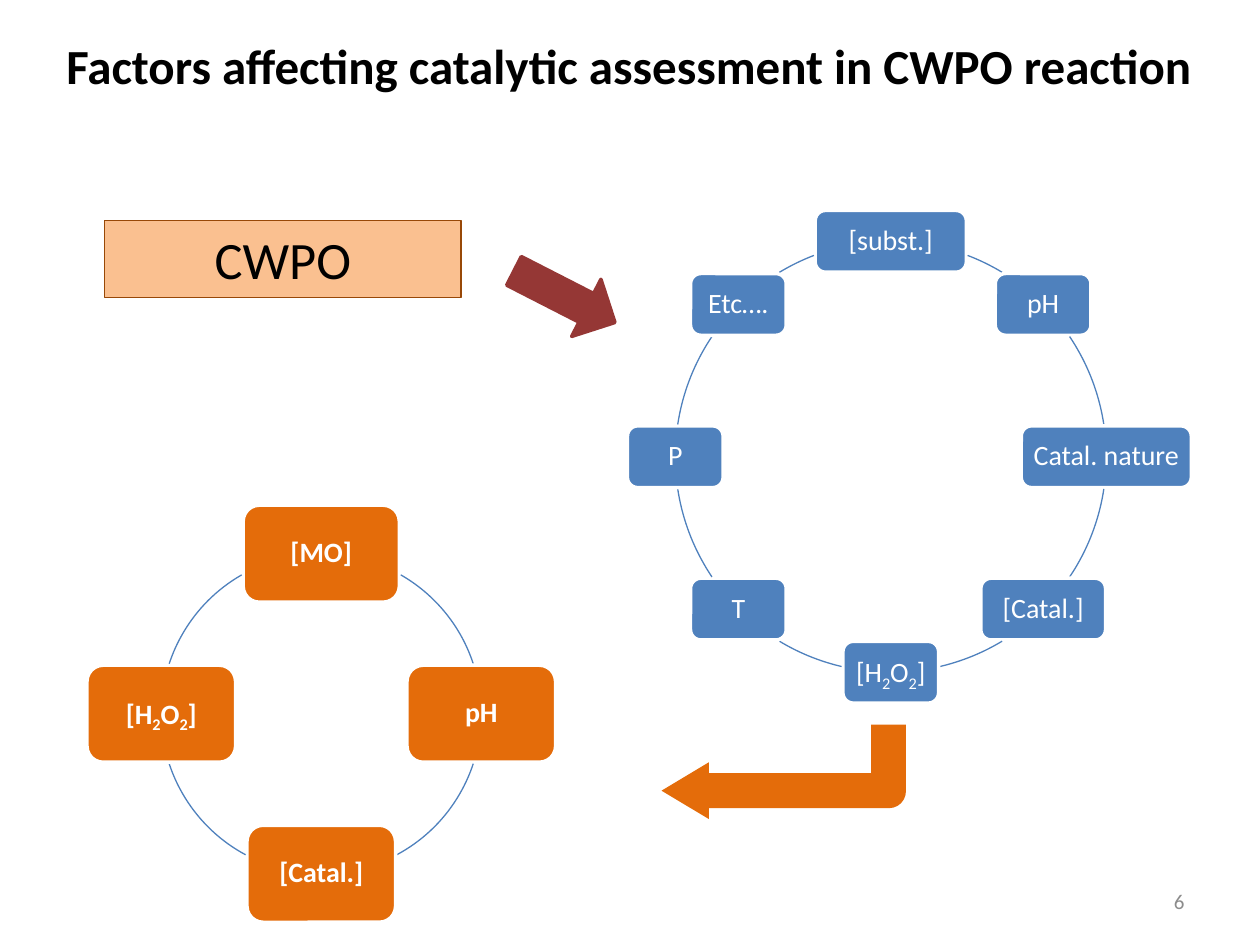
from math import cos, radians, sin

from lxml import etree
from pptx import Presentation, util as u
from pptx.dml.color import RGBColor
from pptx.enum import shapes, text

THEME = {
    "font": "Calibri",
    "ink": "000000", "paper": "FFFFFF", "muted": "8C8C8C",
    "blue": "4F81BD", "orange": "E46C0A", "peach": "FAC090",
    "brown": "984807", "red": "953735",
    "title": 28, "process": 30, "factor": 16, "number": 12,
    "thin": 0.75, "thick": 2,
}

TITLE = "Factors affecting catalytic assessment in CWPO reaction"
PROCESS = "CWPO"
NUMBER = "6"
ALL_FACTORS = {
    "factors": [("[subst.]", 12), ("pH", 7.6), ("Catal. nature", 13.5),
                ("[Catal.]", 9.9), ("[H|2|O|2|]", 7.6), ("T", 7.6),
                ("P", 7.6), ("Etc….", 7.6)],
    "center": (70.7, 36.25), "radius": 17.1, "height": 4.9,
    "fill": "blue", "bold": False,
}
STUDIED_FACTORS = {
    "factors": [("[MO]", 12.4), ("pH", 11.8), ("[Catal.]", 11.8),
                ("[H|2|O|2|]", 11.8)],
    "center": (25.5, 56.65), "radius": 12.7, "height": 7.7,
    "fill": "orange", "bold": True,
}

COLUMNS, ROWS = 100, 75
KIND = shapes.MSO_SHAPE
ALIGN = text.PP_ALIGN
ANCHOR = text.MSO_ANCHOR

deck = Presentation()
deck.slide_width, deck.slide_height = u.Inches(10), u.Inches(7.5)
slide = deck.slides.add_slide(deck.slide_layouts[6])


def place(left, top, width, height):
    column, row = deck.slide_width / COLUMNS, deck.slide_height / ROWS
    return [round(n * cell) for n, cell in
            zip((left, top, width, height), (column, row, column, row))]


def color(name):
    return RGBColor.from_string(THEME[name])


def apply(target, formats):
    for name, value in formats.items():
        setattr(target, name, value)


def draw(parent, kind, box, fill=None, line=None, weight="thin"):
    part = parent.add_shape(kind, *place(*box))
    part.shadow.inherit = False
    if fill:
        part.fill.solid()
        part.fill.fore_color.rgb = color(fill)
    else:
        part.fill.background()
    if line:
        part.line.color.rgb = color(line)
        part.line.width = u.Pt(THEME[weight])
    else:
        part.line.fill.background()
    return part


def write(part, label, size, ink, bold=False, align=ALIGN.CENTER,
          frame={}, spacing=1.0):
    apply(part.text_frame, {"word_wrap": True, "vertical_anchor": ANCHOR.MIDDLE, **frame})
    paragraph = part.text_frame.paragraphs[0]
    apply(paragraph, {"alignment": align, "line_spacing": spacing})
    for index, piece in enumerate(label.split("|")):
        run = paragraph.add_run()
        run.text = piece
        apply(run.font, {"name": THEME["font"], "size": u.Pt(THEME[size]), "bold": bold})
        run.font.color.rgb = color(ink)
        if index % 2:
            run._r.get_or_add_rPr().set("baseline", "-25000")


def ring(factors, center, radius, height, fill, bold):
    group = slide.shapes.add_group_shape().shapes
    step = 360 / len(factors)

    def on_circle(angle):
        return (center[0] + radius * cos(radians(angle)),
                center[1] + radius * sin(radians(angle)))

    def covers(index, point):
        middle = on_circle(index * step - 90)
        return (abs(point[0] - middle[0]) <= factors[index][1] / 2 + 0.1
                and abs(point[1] - middle[1]) <= height / 2 + 0.1)

    margins = {f"margin_{side}": u.Inches(0.07)
               for side in ("left", "right", "top", "bottom")}
    for index, (label, width) in enumerate(factors):
        start = index * step - 90
        x, y = on_circle(start)
        node = draw(group, KIND.ROUNDED_RECTANGLE,
                    (x - width / 2, y - height / 2, width, height), fill, "paper", "thick")
        write(node, label, "factor", "paper", bold,
              frame={**margins, "word_wrap": False}, spacing=0.9)

        following = (index + 1) % len(factors)
        angles = [start + tenth / 10 for tenth in range(round(step * 10))]
        visible = [angle for angle in angles
                   if not covers(index, on_circle(angle))
                   and not covers(following, on_circle(angle))]
        arc = draw(group, KIND.ARC,
                   (center[0] - radius, center[1] - radius, 2 * radius, 2 * radius),
                   line="blue")
        for end, angle in enumerate((visible[0], visible[-1])):
            arc.adjustments[end] = angle % 360 * 0.6


def caption(box, label, size, ink, **formats):
    write(slide.shapes.add_textbox(*place(*box)), label, size, ink, **formats)


process = draw(slide.shapes, KIND.RECTANGLE, (8.3, 17.5, 28.3, 6.1), "peach", "brown")
write(process, PROCESS, "process", "ink", frame={"vertical_anchor": ANCHOR.TOP})

ring(**ALL_FACTORS)
to_all = draw(slide.shapes, KIND.RIGHT_ARROW, (40.3, 21, 9, 5.1), "red", "red", "thick")
to_all.rotation = 27.1
ring(**STUDIED_FACTORS)

caption((0, 0.8, 99.8, 8.7), TITLE, "title", "ink", bold=True)

to_studied = draw(slide.shapes, KIND.BENT_ARROW, (52.5, 57.5, 19.4, 7.5), "orange")
to_studied.rotation = 180
for index, share in enumerate((0.37, 0.3, 0.5, 0.18)):
    to_studied.adjustments[index] = share

caption((71.7, 69.5, 23.3, 4), NUMBER, "number", "muted", align=ALIGN.RIGHT)

deck.save("out.pptx")
